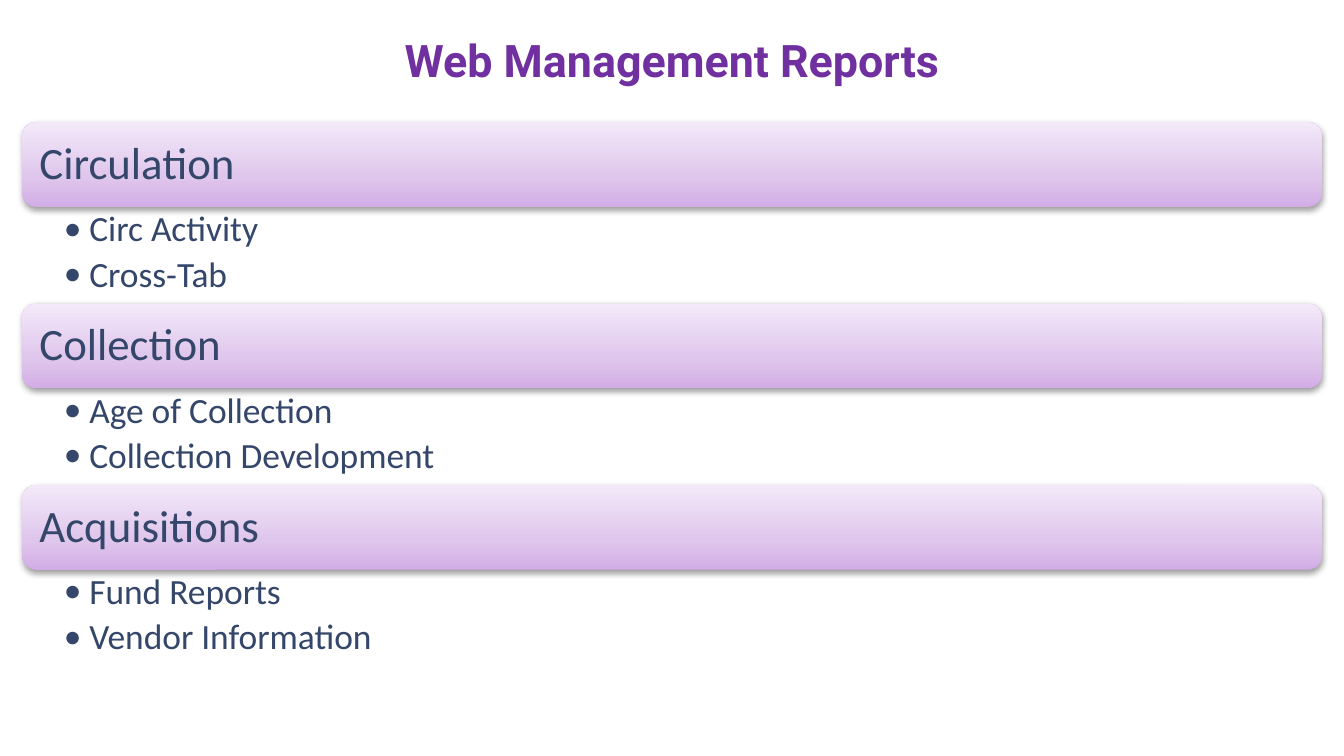
from lxml import etree
from pptx import Presentation
from pptx.dml.color import RGBColor
from pptx.enum import shapes, text
from pptx.oxml import ns
from pptx.util import Inches, Pt

PURPLE = RGBColor(0x70, 0x30, 0xA0)
SLATE = RGBColor(0x34, 0x46, 0x6A)
BLACK = RGBColor(0x00, 0x00, 0x00)
BAR_STOPS = [
    (0, RGBColor(0xD3, 0xAD, 0xE6)),
    (35, RGBColor(0xDF, 0xC6, 0xEC)),
    (100, RGBColor(0xF3, 0xE9, 0xF9)),
]

PAGE_WIDTH = 10
PAGE_HEIGHT = PAGE_WIDTH * 9 / 16
WIDTH = 9.67
LEFT = (PAGE_WIDTH - WIDTH) / 2
BAR_HEIGHT, LIST_HEIGHT = 0.63, 0.72
SECTIONS_TOP = 0.91
SECTIONS = [
    ("Circulation", ["Circ Activity", "Cross-Tab"]),
    ("Collection", ["Age of Collection", "Collection Development"]),
    ("Acquisitions", ["Fund Reports", "Vendor Information"]),
]


def add_element(parent, tag, **attributes):
    """Append a DrawingML element with the given attributes."""
    element = etree.SubElement(parent, ns.qn(tag))
    for name, value in attributes.items():
        element.set(name, str(value))
    return element


def add_text(page, box, lines, size, color, font="Calibri", bold=False,
             align=text.PP_ALIGN.LEFT, anchor=text.MSO_ANCHOR.MIDDLE,
             margins=(0.1, 0.1, 0.1, 0.1), spacing=0.9, after=0, bullet_indent=None):
    """Add a text box with one paragraph for each line."""
    frame = page.shapes.add_textbox(*map(Inches, box)).text_frame
    frame.word_wrap = True
    frame.vertical_anchor = anchor
    (frame.margin_left, frame.margin_top,
     frame.margin_right, frame.margin_bottom) = map(Inches, margins)
    for index, line in enumerate(lines):
        para = frame.add_paragraph() if index else frame.paragraphs[0]
        para.alignment = align
        para.line_spacing = spacing
        para.space_after = Pt(after)
        if bullet_indent:
            para.level = 1
            properties = para._p.get_or_add_pPr()
            properties.set("marL", str(Inches(bullet_indent)))
            properties.set("indent", str(-Inches(bullet_indent)))
            add_element(properties, "a:buFont", typeface=font)
            add_element(properties, "a:buChar", char="•")
        para.font.size = Pt(size)
        span = para.add_run()
        span.text = line
        span.font.size = Pt(size)
        span.font.name = font
        span.font.bold = bold
        span.font.color.rgb = color


def add_bar(page, box):
    """Add a rounded bar with a vertical gradient and a soft shadow."""
    bar = page.shapes.add_shape(shapes.MSO_SHAPE.ROUNDED_RECTANGLE, *map(Inches, box))
    bar.line.fill.background()
    bar.fill.gradient()
    bar.fill.gradient_angle = 90
    properties = bar._element.spPr
    stops = properties.find(".//" + ns.qn("a:gsLst"))
    for stop in list(stops):
        stops.remove(stop)
    for position, color in BAR_STOPS:
        stop = add_element(stops, "a:gs", pos=position * 1000)
        add_element(stop, "a:srgbClr", val=color)
    bar.shadow.inherit = False
    effects = properties.find(ns.qn("a:effectLst"))
    shadow = add_element(effects, "a:outerShdw", blurRad=Pt(3.1), dist=Pt(1.6),
                         dir=90 * 60000, rotWithShape=0)
    shade = add_element(shadow, "a:srgbClr", val=BLACK)
    add_element(shade, "a:alpha", val=38000)


def add_section(page, box, heading, items):
    """Add a heading bar with its bulleted list below."""
    left, top, width, height = box
    inset = 0.03
    add_bar(page, (left, top, width, BAR_HEIGHT))
    add_text(page, (left + inset, top + inset, width - 2 * inset, BAR_HEIGHT - 2 * inset),
             [heading], 24, SLATE)
    add_text(page, (left, top + BAR_HEIGHT, width, height - BAR_HEIGHT), items, 19, SLATE,
             anchor=text.MSO_ANCHOR.TOP, margins=(0.31, 0.03, 0.19, 0.03),
             after=3.8, bullet_indent=0.19)


def add_title(page, box):
    """Add the centred slide title."""
    add_text(page, box, ["Web Management Reports"], 24, PURPLE, font="Roboto", bold=True,
             align=text.PP_ALIGN.CENTER, spacing=1.0)


def main():
    """Build the slide and save the deck."""
    deck = Presentation()
    deck.slide_width, deck.slide_height = Inches(PAGE_WIDTH), Inches(PAGE_HEIGHT)
    page = deck.slides.add_slide(deck.slide_layouts[6])
    add_title(page, (LEFT, 0.14, WIDTH, 0.61))
    height = BAR_HEIGHT + LIST_HEIGHT
    for index, (heading, items) in enumerate(SECTIONS):
        add_section(page, (LEFT, SECTIONS_TOP + index * height, WIDTH, height), heading, items)
    deck.save("out.pptx")


if __name__ == "__main__":
    main()
